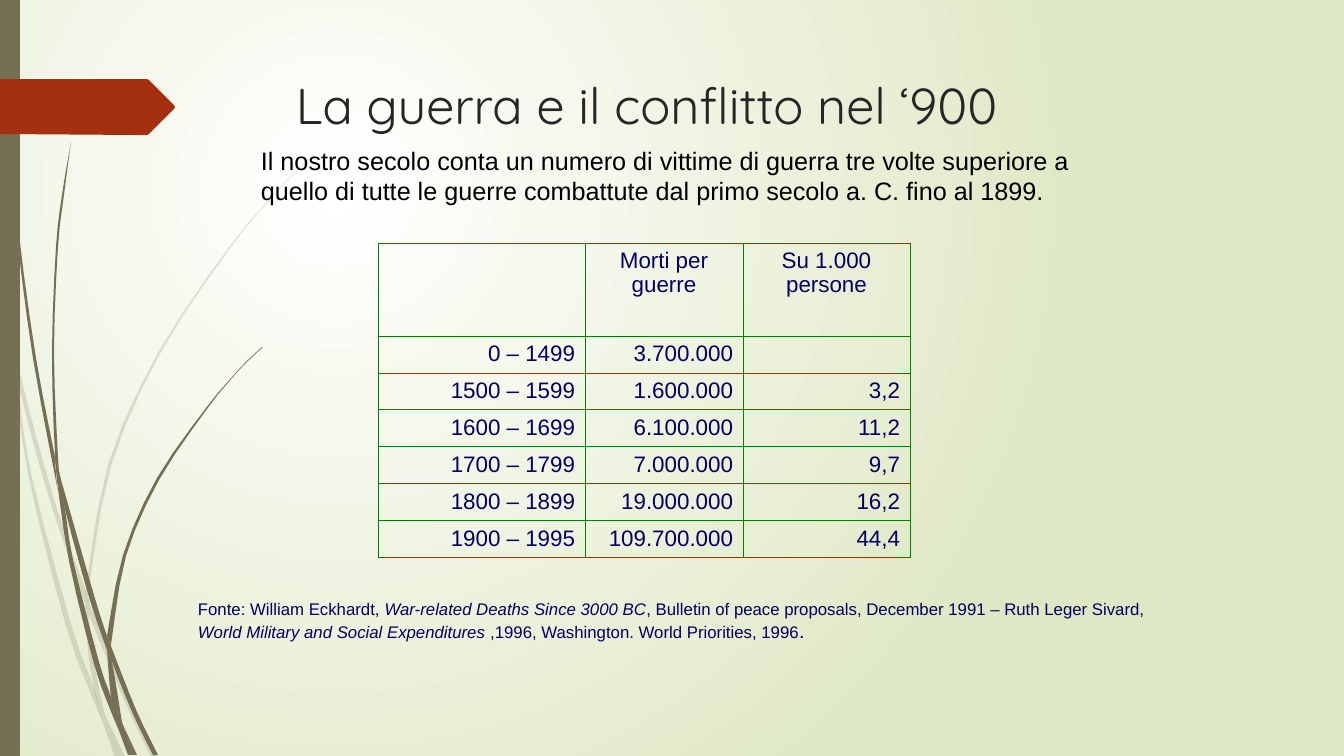
"""Build the slide on war deaths across the centuries."""
from lxml.etree import SubElement
from pptx import Presentation
from pptx.dml.color import RGBColor
from pptx.enum.shapes import MSO_SHAPE
from pptx.enum.text import MSO_ANCHOR, PP_ALIGN
from pptx.oxml.ns import qn
from pptx.util import Pt

TITLE = [[("La guerra e il conflitto nel ‘900", {})]]
INTRO = [
    [("Il nostro secolo conta un numero di vittime di guerra tre volte superiore a", {})],
    [("quello di tutte le guerre combattute dal primo secolo a. C. fino al 1899.", {})],
]
CITATION = [
    [("Fonte: William Eckhardt, ", {}),
     ("War-related Deaths Since 3000 BC", {"italic": True}),
     (", Bulletin of peace proposals, December 1991 – Ruth Leger Sivard,", {})],
    [("World Military and Social Expenditures", {"italic": True}),
     (" ,1996, Washington. World Priorities, 1996", {}),
     (".", {"size": Pt(14)})],
]
DEATHS = [
    ("", "Morti per guerre", "Su 1.000 persone"),
    ("0 – 1499", "3.700.000", ""),
    ("1500 – 1599", "1.600.000", "3,2"),
    ("1600 – 1699", "6.100.000", "11,2"),
    ("1700 – 1799", "7.000.000", "9,7"),
    ("1800 – 1899", "19.000.000", "16,2"),
    ("1900 – 1995", "109.700.000", "44,4"),
]
COLUMN_WIDTHS = (207, 158, 167)
HEADER_HEIGHT, ROW_HEIGHT = 93, 37

PALE_BLADES = [
    ([(0, 284), (9, 325), (11, 353)], [(10, 347), (0, 301)]),
    ([(14, 348), (36, 436), (62, 524), (86, 591)], [(85, 604), (58, 526), (36, 453), (17, 379)]),
    ([(89, 615), (124, 700), (151, 757)], [(156, 757), (128, 698), (93, 612), (89, 601)]),
    ([(120, 757), (125, 757)], [(106, 717)]),
    ([(11, 353), (28, 474), (66, 626), (93, 699), (102, 720)],
     [(100, 713), (94, 688), (71, 624), (31, 473), (17, 379), (11, 353)]),
    ([(85, 604), (88, 651), (94, 688), (97, 698), (106, 717)],
     [(104, 712), (92, 651), (89, 615), (89, 613), (85, 604)]),
    ([(314, 155), (292, 176), (270, 200), (231, 247), (161, 352), (111, 466), (89, 589), (89, 601)],
     [(86, 591), (86, 589), (108, 465), (159, 351), (230, 246), (270, 199), (291, 176), (314, 154)]),
    ([(102, 720), (115, 757)], [(120, 757)]),
    ([(89, 613), (89, 601)], [(86, 591), (85, 604)]),
    ([(94, 688), (100, 713), (102, 720), (120, 757)], [(106, 717), (97, 698)]),
]
DARK_BLADES = [
    ([(3, 0), (4, 48), (7, 111), (17, 235), (33, 358), (56, 481), (57, 485)],
     [(55, 461), (55, 457), (36, 358), (19, 234), (8, 110), (5, 48), (4, 0)]),
    ([(60, 476), (94, 595), (107, 636)], [(107, 650), (89, 597), (65, 509), (60, 476)]),
    ([(111, 646), (112, 661), (133, 714), (153, 755)],
     [(158, 755), (137, 712), (114, 654), (111, 646)]),
    ([(57, 481), (69, 561), (94, 664), (112, 714), (118, 728)],
     [(117, 723), (111, 697), (99, 662), (73, 560), (65, 509), (57, 481)]),
    ([(60, 476), (58, 457), (54, 352), (58, 247), (64, 195), (71, 142)],
     [(71, 142), (62, 195), (56, 247), (52, 352), (55, 453), (60, 476)]),
    ([(134, 755), (137, 755)], [(123, 725)]),
    ([(57, 481), (65, 509)], [(60, 476), (55, 453), (55, 457)]),
    ([(263, 347), (247, 362), (233, 377), (207, 409), (159, 480), (126, 556), (112, 638), (111, 646)],
     [(107, 636), (123, 555), (157, 478), (206, 408), (233, 376), (247, 361), (262, 347)]),
    ([(118, 728), (128, 755)], [(132, 755)]),
    ([(107, 650), (111, 697), (117, 712), (123, 725)],
     [(122, 722), (112, 661), (110, 656), (107, 650)]),
    ([(107, 650), (110, 656), (112, 661)], [(111, 646), (107, 636)]),
    ([(111, 697), (117, 723), (118, 728), (131, 755)], [(134, 755), (123, 725), (117, 712)]),
]
ARROW = [(0, 79), (147, 79), (149, 80), (174, 105), (175, 107), (174, 109),
         (149, 134), (147, 135), (137, 135), (0, 134)]

THEME = {
    "glow": "FFFFFF", "field": "DFE8C4", "grass": "766F54", "arrow": "A53010", "grid": "008000",
    "title": {"name": "Quicksand", "size": Pt(36), "color": "262626"},
    "intro": {"name": "Arial", "size": Pt(18), "color": "000000"},
    "table": {"name": "Arial", "size": Pt(16), "color": "000066"},
    "citation": {"name": "Arial", "size": Pt(12), "color": "000066"},
}
CURVE_STEPS = 3


def px(length):
    return round(length * 914400 / 100.8)


def assign(target, values):
    for attribute, value in values.items():
        setattr(target, attribute, value)


def style_font(font, values):
    values = dict(values)
    font.color.rgb = RGBColor.from_string(values.pop("color"))
    assign(font, values)


def paint(shape, color, alpha=None):
    shape.shadow.inherit = False
    shape.fill.solid()
    shape.fill.fore_color.rgb = RGBColor.from_string(color)
    shape.line.fill.background()
    if alpha:
        tint = shape._element.spPr.find(".//" + qn("a:srgbClr"))
        SubElement(tint, qn("a:alpha"), val=str(alpha * 1000))


def smooth(edge):
    if len(edge) < 3:
        return edge
    padded = [edge[0], *edge, edge[-1]]
    curve = []
    for knots in zip(padded, padded[1:], padded[2:], padded[3:]):
        for step in range(CURVE_STEPS):
            t = step / CURVE_STEPS
            curve.append(tuple(
                b + t / 2 * (c - a + t * (2 * a - 5 * b + 4 * c - d + t * (3 * (b - c) + d - a)))
                for a, b, c, d in zip(*knots)))
    return curve + [edge[-1]]


def add_outline(slide, points, color, alpha=None):
    start, *others = [(px(x), px(y)) for x, y in points]
    builder = slide.shapes.build_freeform(*start, scale=1.0)
    builder.add_line_segments(others, close=True)
    paint(builder.convert_to_shape(), color, alpha)


def add_text(slide, box, paragraphs, font, anchor=MSO_ANCHOR.TOP):
    frame = slide.shapes.add_textbox(*map(px, box)).text_frame
    assign(frame, {"word_wrap": True, "vertical_anchor": anchor})
    for index, pieces in enumerate(paragraphs):
        paragraph = frame.add_paragraph() if index else frame.paragraphs[0]
        for words, emphasis in pieces:
            run = paragraph.add_run()
            run.text = words
            style_font(run.font, {**font, **emphasis})


def fill_cell(cell, words, alignment):
    assign(cell, {"margin_left": px(10), "margin_right": px(10),
                  "margin_top": px(5), "margin_bottom": px(5)})
    paragraph = cell.text_frame.paragraphs[0]
    paragraph.alignment = alignment
    if words:
        run = paragraph.add_run()
        run.text = words
        style_font(run.font, THEME["table"])
    else:
        SubElement(paragraph._p, qn("a:endParaRPr"), sz=str(int(THEME["table"]["size"].pt * 100)))
    properties = cell._tc.get_or_add_tcPr()
    for side in ("lnL", "lnR", "lnT", "lnB"):
        border = SubElement(properties, qn(f"a:{side}"), w=str(Pt(0.75)))
        SubElement(SubElement(border, qn("a:solidFill")), qn("a:srgbClr"), val=THEME["grid"])
    cell.fill.background()


def add_deaths_table(slide, left, top):
    heights = [HEADER_HEIGHT] + [ROW_HEIGHT] * (len(DEATHS) - 1)
    table = slide.shapes.add_table(
        len(DEATHS), len(COLUMN_WIDTHS), px(left), px(top),
        px(sum(COLUMN_WIDTHS)), px(sum(heights))).table
    assign(table, {"first_row": False, "horz_banding": False})
    for column, width in zip(table.columns, COLUMN_WIDTHS):
        column.width = px(width)
    for index, (row, height, entries) in enumerate(zip(table.rows, heights, DEATHS)):
        row.height = px(height)
        for cell, words in zip(row.cells, entries):
            fill_cell(cell, words, PP_ALIGN.RIGHT if index else PP_ALIGN.CENTER)


def paint_background(slide):
    fill = slide.background.fill
    fill.gradient()
    for stop, position, color in zip(fill.gradient_stops, (0, 1), (THEME["glow"], THEME["field"])):
        stop.position = position
        stop.color.rgb = RGBColor.from_string(color)
    linear = slide._element.find(".//" + qn("a:lin"))
    gradient = linear.getparent()
    gradient.remove(linear)
    circle = SubElement(gradient, qn("a:path"), {"path": "circle"})
    SubElement(circle, qn("a:fillToRect"), l="50000", t="50000", r="100000", b="100000")


def main():
    deck = Presentation()
    assign(deck, {"slide_width": px(1344), "slide_height": px(756)})
    slide = deck.slides.add_slide(deck.slide_layouts[6])
    paint_background(slide)
    for blades, alpha in ((PALE_BLADES, 20), (DARK_BLADES, None)):
        for outward, back in blades:
            add_outline(slide, smooth(outward) + smooth(back), THEME["grass"], alpha)
    paint(slide.shapes.add_shape(MSO_SHAPE.RECTANGLE, 0, 0, px(20), px(756)), THEME["grass"])
    add_outline(slide, ARROW, THEME["arrow"])
    add_text(slide, (286, 69, 983, 141), TITLE, THEME["title"])
    add_deaths_table(slide, 378, 243)
    add_text(slide, (188, 594, 979, 72), CITATION, THEME["citation"])
    add_text(slide, (251, 140, 835, 71), INTRO, THEME["intro"], MSO_ANCHOR.MIDDLE)
    deck.save("out.pptx")


if __name__ == "__main__":
    main()
